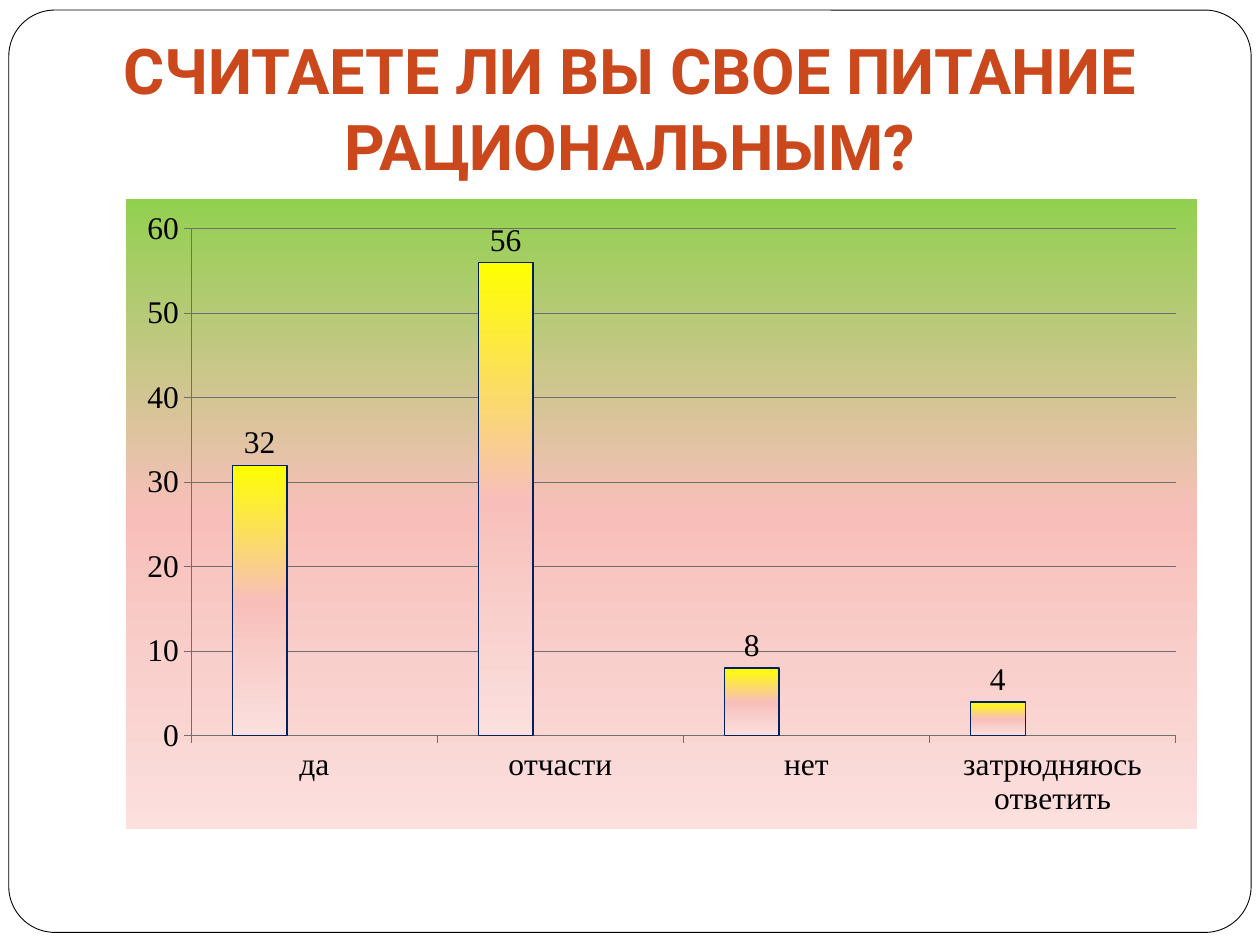
"""Build the survey slide on rational nutrition with a column chart."""
from dataclasses import dataclass

from lxml import etree
from pptx import Presentation
from pptx.chart.data import CategoryChartData
from pptx.dml.color import RGBColor
from pptx.enum.chart import XL_CHART_TYPE, XL_LABEL_POSITION, XL_TICK_MARK
from pptx.enum.shapes import MSO_SHAPE
from pptx.enum.text import MSO_ANCHOR, MSO_AUTO_SIZE, PP_ALIGN
from pptx.oxml import parse_xml
from pptx.oxml.ns import qn
from pptx.util import Inches, Pt

COLUMNS = XL_CHART_TYPE.COLUMN_CLUSTERED
OUTSIDE_END = XL_LABEL_POSITION.OUTSIDE_END
TICK_OUTSIDE = XL_TICK_MARK.OUTSIDE
ROUNDED = MSO_SHAPE.ROUNDED_RECTANGLE
BOTTOM = MSO_ANCHOR.BOTTOM
NO_AUTOFIT = MSO_AUTO_SIZE.NONE
CENTER = PP_ALIGN.CENTER

COLORS = {
    "paper": "FFFFFF",
    "text": "000000",
    "title": "CA481C",
    "grid": "6F6F6F",
    "bar_line": "002060",
    "green": "92D050",
    "yellow": "FFFF00",
    "pink": "F8BFBA",
    "pale": "FBE0DE",
    "second": "9B2D1F",
    "third": "A28E6A",
}
CHART_FONT = "Times New Roman"
TITLE_FONT = "Roboto"
DRAWING_NS = "http://schemas.openxmlformats.org/drawingml/2006/main"


@dataclass(frozen=True)
class Answer:
    label: str
    percent: int


ANSWERS = [
    Answer("да", 32),
    Answer("отчасти", 56),
    Answer("нет", 8),
    Answer("затрюдняюсь ответить", 4),
]


def rgb(name: str) -> RGBColor:
    return RGBColor.from_string(COLORS[name])


def vertical_gradient(top: str):
    stops = "".join(
        f'<a:gs pos="{position}"><a:srgbClr val="{COLORS[name]}"/></a:gs>'
        for position, name in ((0, top), (50000, "pink"), (100000, "pale"))
    )
    return parse_xml(
        f'<a:gradFill xmlns:a="{DRAWING_NS}" rotWithShape="1">'
        f'<a:gsLst>{stops}</a:gsLst><a:lin ang="5400000" scaled="0"/></a:gradFill>'
    )


def add_frame(slide) -> None:
    frame = slide.shapes.add_shape(
        ROUNDED, Inches(0.07), Inches(0.08), Inches(9.86), Inches(7.32)
    )
    frame.adjustments[0] = 0.05
    frame.shadow.inherit = False
    frame.fill.solid()
    frame.fill.fore_color.rgb = rgb("paper")
    frame.line.color.rgb = rgb("text")
    frame.line.width = Pt(0.5)
    slide.shapes.title.element.addprevious(frame.element)


def fill_title(title, wording: str) -> None:
    title.left, title.top = Inches(0), Inches(0.3)
    title.width, title.height = Inches(10), Inches(1.25)
    frame = title.text_frame
    frame.text = wording
    frame.word_wrap = True
    frame.auto_size = NO_AUTOFIT
    frame.vertical_anchor = BOTTOM
    frame.margin_left = frame.margin_right = frame.margin_bottom = Inches(0.1)
    frame.margin_top = Inches(0.05)
    heading = frame.paragraphs[0]
    heading.alignment = CENTER
    font = heading.runs[0].font
    font.name, font.size, font.bold = TITLE_FONT, Pt(36), True
    font.color.rgb = rgb("title")


def style_axis(axis) -> None:
    axis.major_tick_mark = TICK_OUTSIDE
    axis.format.line.color.rgb = rgb("grid")
    axis.format.line.width = Pt(0.75)


def add_answer_chart(slide, answers: list[Answer]) -> None:
    survey = CategoryChartData()
    survey.categories = [answer.label for answer in answers]
    survey.add_series("Series 1", [answer.percent for answer in answers])
    for name in ("Series 2", "Series 3"):
        survey.add_series(name, [None] * len(answers))
    chart = slide.shapes.add_chart(
        COLUMNS, Inches(1), Inches(1.58), Inches(8.5), Inches(5), survey
    ).chart
    chart.has_legend = chart.has_title = False
    chart.font.name, chart.font.size = CHART_FONT, Pt(18)
    chart.font.color.rgb = rgb("text")

    background = etree.Element(qn("c:spPr"))
    background.append(vertical_gradient("green"))
    etree.SubElement(etree.SubElement(background, qn("a:ln")), qn("a:noFill"))
    chart.element.xpath("c:chart")[0].addnext(background)

    style_axis(chart.category_axis)
    values = chart.value_axis
    style_axis(values)
    values.minimum_scale, values.maximum_scale, values.major_unit = 0, 60, 10
    values.has_major_gridlines = True
    values.major_gridlines.format.line.color.rgb = rgb("grid")
    values.major_gridlines.format.line.width = Pt(0.75)

    plot = chart.plots[0]
    plot.vary_by_categories = False
    plot.gap_width, plot.overlap = 150, 0
    percents, *empty_series = plot.series
    percents.format.line.color.rgb = rgb("bar_line")
    percents.format.line.width = Pt(0.75)
    chart.element.xpath(".//c:ser/c:spPr")[0].insert(0, vertical_gradient("yellow"))
    labels = percents.data_labels
    labels.show_value = True
    labels.position = OUTSIDE_END
    for series, color in zip(empty_series, ("second", "third")):
        series.format.fill.solid()
        series.format.fill.fore_color.rgb = rgb(color)


def main() -> None:
    deck = Presentation()
    deck.slide_width, deck.slide_height = Inches(10), Inches(7.5)
    slide = deck.slides.add_slide(deck.slide_layouts[5])
    add_frame(slide)
    fill_title(slide.shapes.title, "СЧИТАЕТЕ ЛИ ВЫ СВОЕ ПИТАНИЕ РАЦИОНАЛЬНЫМ?")
    add_answer_chart(slide, ANSWERS)
    deck.save("out.pptx")


if __name__ == "__main__":
    main()
